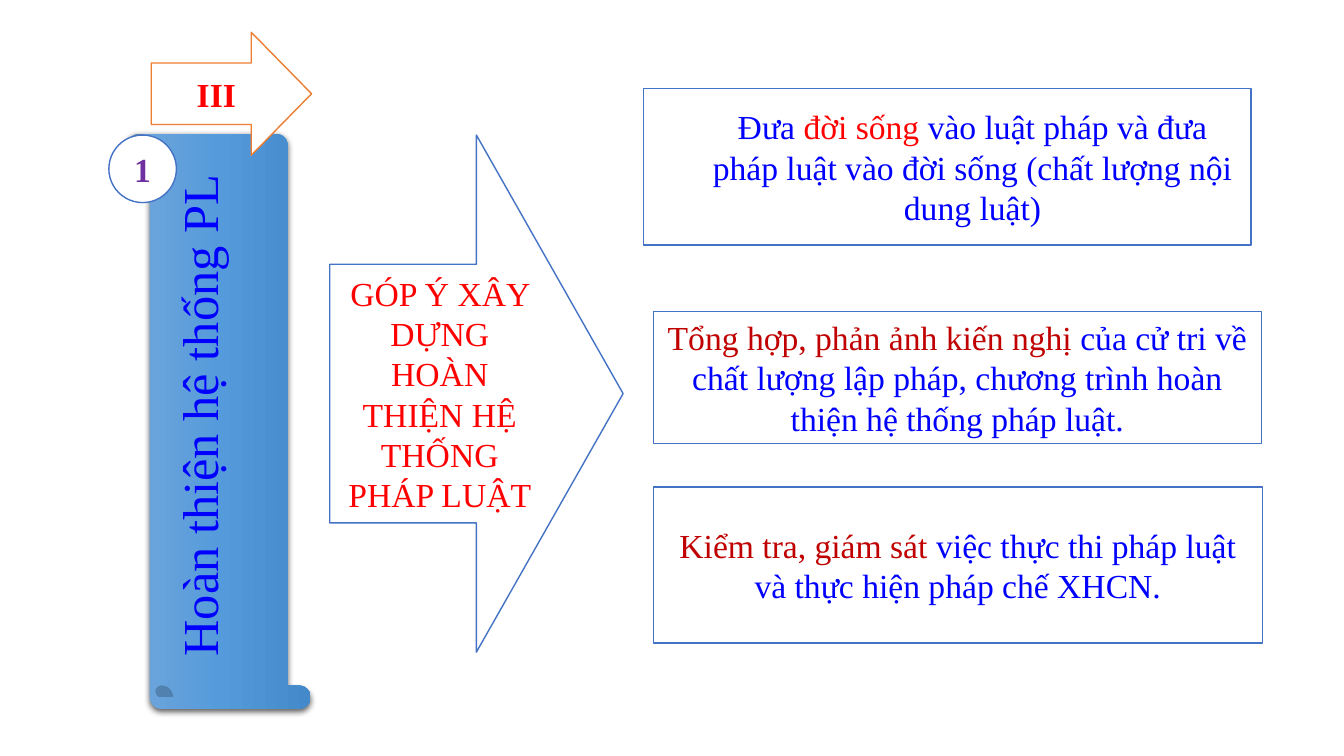
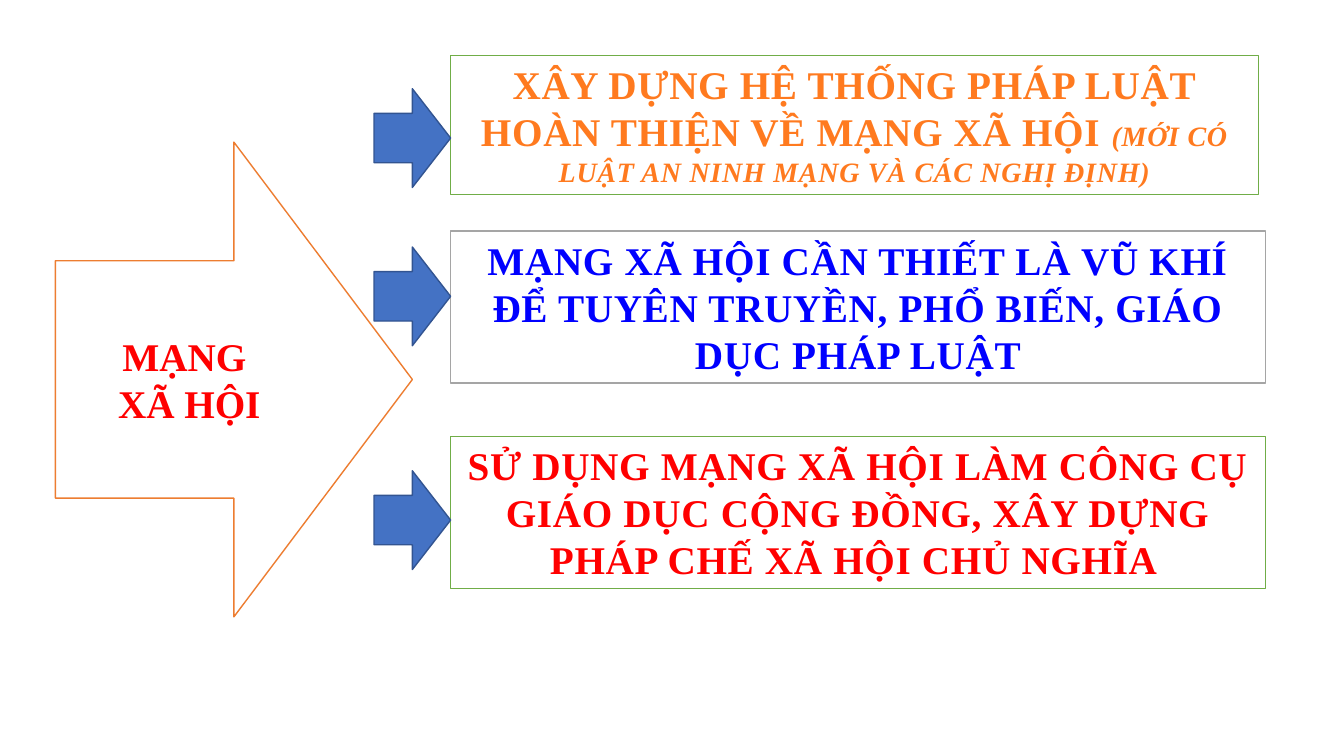
import copy
import pptx
import pptx.dml.color
import pptx.enum.shapes
import pptx.enum.text
import pptx.oxml
import pptx.oxml.ns
import pptx.util

Inches = pptx.util.Inches
Pt = pptx.util.Pt
qn = pptx.oxml.ns.qn
Kind = pptx.enum.shapes.MSO_SHAPE
Anchor = pptx.enum.text.MSO_ANCHOR

HUES = {
    "white": "FFFFFF", "red": "FF0000", "dark": "C00000", "ink": "0000FF",
    "violet": "7030A0", "blue": "4472C4", "navy": "325491",
    "orange": "ED7D31", "green": "70AD47", "grey": "A5A5A5",
    "flame": "FF7A1F", "rust": "CA5200",
    "sky": "71A6DB", "mid": "559BDB", "deep": "448ACA",
}
FLAME = [(0.25, "flame"), (1, "rust")]
SCROLL = [(0, "sky"), (0.5, "mid"), (1, "deep")]
SHADOW = (
    '<a:outerShdw %s blurRad="57150" dist="19050" dir="5400000" algn="ctr" '
    'rotWithShape="0"><a:srgbClr val="000000"><a:alpha val="63000"/>'
    '</a:srgbClr></a:outerShdw>' % pptx.oxml.ns.nsdecls("a"))


def hue(name):
    return pptx.dml.color.RGBColor.from_string(HUES[name])


def blend(fill, stops):
    """Set a top-to-bottom gradient on a fill."""
    fill.gradient_angle = 270
    for stop, (place, name) in zip(fill.gradient_stops, stops):
        stop.position = place
        stop.color.rgb = hue(name)


class Deck:
    """Holds the shared style and the current slide."""

    base = {"name": "Times New Roman", "size": Pt(24), "bold": False}

    def __init__(self):
        self.show = pptx.Presentation()
        self.show.slide_width = Inches(13.33)
        self.show.slide_height = Inches(7.5)
        self.slide = None

    def page(self):
        self.slide = self.show.slides.add_slide(self.show.slide_layouts[6])

    def shape(self, kind, spot, fill="white", line="blue"):
        item = self.slide.shapes.add_shape(kind, *map(Inches, spot))
        item.shadow.inherit = False
        item.fill.solid()
        item.fill.fore_color.rgb = hue(fill)
        item.line.color.rgb = hue(line)
        item.line.width = Pt(1)
        return item

    def text(self, item, paras, anchor=Anchor.MIDDLE, **style):
        """Each paragraph is a list of (words, colour, format) runs."""
        frame = item.text_frame
        frame.word_wrap = True
        frame.vertical_anchor = anchor
        for i, runs in enumerate(paras):
            para = frame.add_paragraph() if i else frame.paragraphs[0]
            para.alignment = pptx.enum.text.PP_ALIGN.CENTER
            for words, tint, *more in runs:
                run = para.add_run()
                run.text = words
                look = {**self.base, **style, **(more[0] if more else {})}
                for key, value in look.items():
                    setattr(run.font, key, value)
                if isinstance(tint, list):
                    run.font.fill.gradient()
                    blend(run.font.fill, tint)
                else:
                    run.font.color.rgb = hue(tint)

    def box(self, spot, runs, line="blue", **style):
        item = self.shape(Kind.RECTANGLE, spot, line=line)
        self.text(item, [runs], **style)
        return item

    def arrow(self, spot, paras=(), fill="white", line="blue", **style):
        item = self.shape(Kind.RIGHT_ARROW, spot, fill, line)
        self.text(item, paras, **style)
        return item

    def badge(self, spot, words):
        item = self.shape(Kind.OVAL, spot)
        self.text(item, [[(words, "violet")]], bold=True)

    def scroll(self, spot, words):
        item = self.shape(Kind.HORIZONTAL_SCROLL, spot)
        item.rotation = 270
        item.line.fill.background()
        item.fill.gradient()
        marks = next(item.element.iter(qn("a:gsLst")))
        marks.append(copy.deepcopy(marks[-1]))
        blend(item.fill, SCROLL)
        glow = item.element.spPr.find(qn("a:effectLst"))
        glow.append(pptx.oxml.parse_xml(SHADOW))
        item.text_frame.margin_bottom = Inches(0.45)
        self.text(item, [[(words, "ink")]], size=Pt(36))


def law(deck):
    deck.page()
    # Vertical scroll and section arrow
    deck.scroll((-0.68, 3.27, 5.7, 1.82), "Hoàn thiện hệ thống PL")
    deck.arrow((1.5, 0.32, 1.59, 1.22), [[("III", "red")]],
               line="orange", bold=True).adjustments[1] = 0.49

    # Three tasks
    first = deck.box((6.38, 0.88, 6.03, 1.55), [
        ("Đưa ", "ink"), ("đời sống ", "red"),
        ("vào luật pháp và đưa pháp luật vào đời sống "
         "(chất lượng nội dung luật)", "ink")])
    first.text_frame.margin_left = Inches(0.6)
    deck.box((6.48, 3.09, 6.03, 1.31), [
        ("Tổng hợp, phản ảnh kiến nghị ", "dark"),
        ("của cử tri về chất lượng lập pháp, chương trình hoàn thiện "
         "hệ thống pháp luật.", "ink")])
    deck.box((6.48, 4.83, 6.04, 1.55), [
        ("Kiểm tra, giám sát ", "dark"),
        ("việc thực thi pháp luật và thực hiện pháp chế XHCN.", "ink")])

    # Main arrow and number
    deck.arrow((3.27, 1.34, 2.91, 5.13), [[
        ("GÓP Ý XÂY DỰNG HOÀN THIỆN HỆ THỐNG PHÁP LUẬT", "red")]])
    deck.badge((1.08, 1.34, 0.67, 0.67), "1")


def social(deck):
    deck.page()
    # Main arrow
    deck.arrow((0.55, 1.41, 3.54, 4.71),
               [[("MẠNG ", "red")], [("XÃ HỘI", "red")]],
               line="orange", size=Pt(28), bold=True)

    # Boxes, each with a small arrow
    rows = [
        (0.55, 8.01, 1.38, 0.88, "green", [
            ("XÂY DỰNG HỆ THỐNG PHÁP LUẬT HOÀN THIỆN VỀ MẠNG XÃ HỘI ", FLAME),
            ("(MỚI CÓ LUẬT AN NINH MẠNG VÀ CÁC NGHỊ ĐỊNH)", FLAME,
             {"size": Pt(20), "italic": True})]),
        (2.29, 8.08, 1.51, 2.45, "grey", [
            ("MẠNG XÃ HỘI CẦN THIẾT LÀ VŨ KHÍ ĐỂ TUYÊN TRUYỀN, PHỔ BIẾN, "
             "GIÁO DỤC PHÁP LUẬT", "ink")]),
        (4.33, 8.08, 1.51, 4.67, "green", [
            ("SỬ DỤNG MẠNG XÃ HỘI LÀM CÔNG CỤ GIÁO DỤC CỘNG ĐỒNG, XÂY DỰNG "
             "PHÁP CHẾ XÃ HỘI CHỦ NGHĨA ", "red")]),
    ]
    for top, width, height, tip, line, runs in rows:
        item = deck.box((4.47, top, width, height), runs, line,
                        anchor=Anchor.TOP, size=Pt(28), bold=True)
        # Letter spacing of half a point
        for mark in item.element.iter(qn("a:rPr")):
            mark.set("spc", "50")
        deck.arrow((3.71, tip, 0.76, 0.98), fill="blue", line="navy")


def main():
    deck = Deck()
    law(deck)
    social(deck)
    deck.show.save("out.pptx")


if __name__ == "__main__":
    main()
